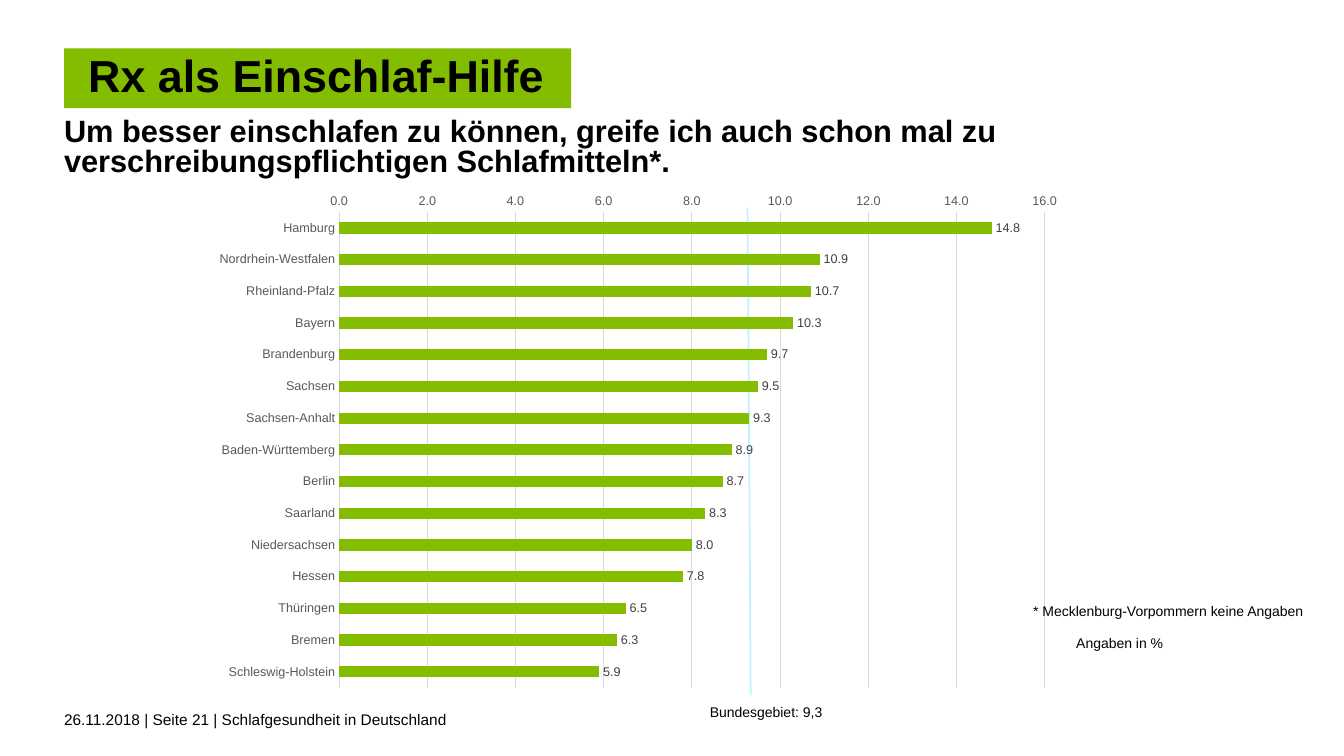
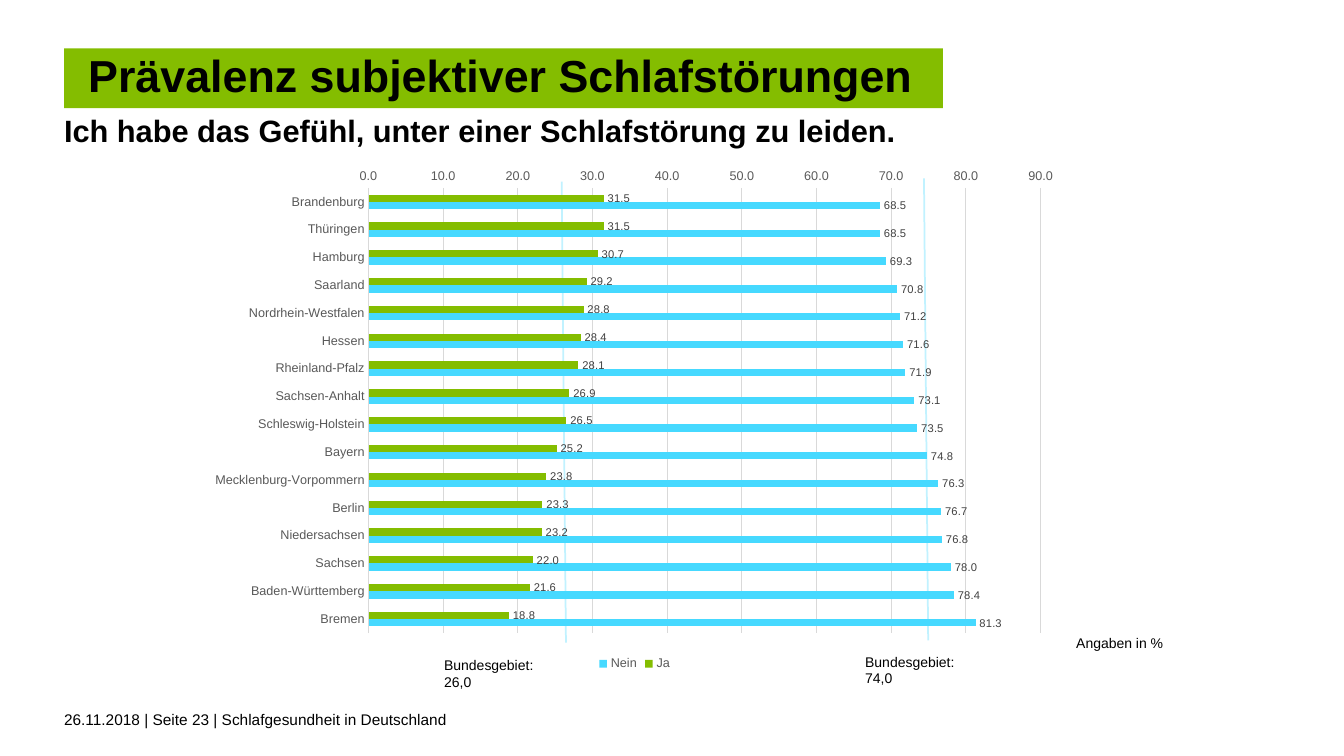
from lxml.etree import SubElement
from pptx import Presentation
from pptx.chart.data import CategoryChartData
from pptx.dml.color import RGBColor
from pptx.enum.chart import XL_CHART_TYPE, XL_LABEL_POSITION, XL_LEGEND_POSITION, XL_TICK_MARK
from pptx.enum.shapes import MSO_CONNECTOR
from pptx.enum.text import MSO_ANCHOR, MSO_AUTO_SIZE, PP_ALIGN
from pptx.oxml import parse_xml
from pptx.oxml.ns import nsdecls, qn
from pptx.util import Emu, Pt

PX = 9525
BLACK = RGBColor(0x00, 0x00, 0x00)
GREEN = RGBColor(0x84, 0xBD, 0x00)
BLUE = RGBColor(0x46, 0xD9, 0xFF)
PALE_BLUE = RGBColor(0xC1, 0xF2, 0xFF)
GRID = RGBColor(0xD9, 0xD9, 0xD9)
AXIS_TEXT = RGBColor(0x59, 0x59, 0x59)
LABEL_TEXT = RGBColor(0x40, 0x40, 0x40)
SERIES_COLORS = (GREEN, BLUE)
FONT = "Arial"
INSET = 23

SLIDES = [
    {
        "title": ("Rx als Einschlaf-Hilfe", 483),
        "subtitle": "Um besser einschlafen zu können, greife ich auch schon mal zu "
                    "verschreibungspflichtigen Schlafmitteln*.",
        "page": 21,
        "chart": (193, 174, 831, 492),
        "plot": (323, 202, 672, 453),
        "scale": (16, 2),
        "label_size": 9,
        "means": [(712, 198, 715, 662)],
        "notes": [
            ("* Mecklenburg-Vorpommern keine Angaben", (961, 569, 319, 26)),
            ("Bundesgebiet: 9,3", (653, 665, 159, 26)),
        ],
        "cats": ["Hamburg", "Nordrhein-Westfalen", "Rheinland-Pfalz", "Bayern", "Brandenburg",
                 "Sachsen", "Sachsen-Anhalt", "Baden-Württemberg", "Berlin", "Saarland",
                 "Niedersachsen", "Hessen", "Thüringen", "Bremen", "Schleswig-Holstein"],
        "series": {
            "Series 1": [14.8, 10.9, 10.7, 10.3, 9.7, 9.5, 9.3, 8.9, 8.7, 8.3, 8.0, 7.8,
                         6.5, 6.3, 5.9],
        },
    },
    {
        "title": ("Prävalenz subjektiver Schlafstörungen", 837),
        "subtitle": "Ich habe das Gefühl, unter einer Schlafstörung zu leiden.",
        "page": 23,
        "chart": (189, 151, 831, 492),
        "plot": (351, 179, 640, 424),
        "scale": (90, 10),
        "label_size": 8,
        "means": [(880, 170, 884, 610), (535, 173, 539, 612)],
        "notes": [
            ("Bundesgebiet: 26,0", (400, 620, 159, 26)),
            ("Bundesgebiet: 74,0", (801, 617, 159, 26)),
        ],
        "cats": ["Brandenburg", "Thüringen", "Hamburg", "Saarland", "Nordrhein-Westfalen",
                 "Hessen", "Rheinland-Pfalz", "Sachsen-Anhalt", "Schleswig-Holstein", "Bayern",
                 "Mecklenburg-Vorpommern", "Berlin", "Niedersachsen", "Sachsen",
                 "Baden-Württemberg", "Bremen"],
        "series": {
            "Ja": [31.5, 31.5, 30.7, 29.2, 28.8, 28.4, 28.1, 26.9, 26.5, 25.2, 23.8, 23.3,
                   23.2, 22.0, 21.6, 18.8],
            "Nein": [68.5, 68.5, 69.3, 70.8, 71.2, 71.6, 71.9, 73.1, 73.5, 74.8, 76.3, 76.7,
                     76.8, 78.0, 78.4, 81.3],
        },
    },
]


def emu(box):
    """Turn pixel lengths into EMU."""
    return [Emu(v * PX) for v in box]


def assign(obj, values):
    """Set attributes of an object from a dict."""
    for name, value in values.items():
        setattr(obj, name, value)


def style_font(font, size, color=BLACK, bold=False):
    """Give a font the deck's typeface with a size, colour and weight."""
    assign(font, {"name": FONT, "size": Pt(size), "bold": bold})
    font.color.rgb = color


def fill_text(sp, text, size, bold=False, left=INSET, right=INSET, spacing=None,
              anchor=MSO_ANCHOR.TOP, wrap=True):
    """Write one left-aligned paragraph into a shape."""
    tf = sp.text_frame
    assign(tf, {
        "auto_size": MSO_AUTO_SIZE.NONE, "word_wrap": wrap, "vertical_anchor": anchor,
        "margin_left": Emu(left * PX), "margin_right": Emu(right * PX),
        "margin_top": Emu(5 * PX), "margin_bottom": Emu(5 * PX),
    })
    p = tf.paragraphs[0]
    assign(p, {"alignment": PP_ALIGN.LEFT, "line_spacing": spacing})
    r = p.add_run()
    r.text = text
    style_font(r.font, size, bold=bold)


def add_text(s, box, text, size, **options):
    """Add a text box."""
    fill_text(s.shapes.add_textbox(*emu(box)), text, size, **options)


def add_heading(s, title, width, subtitle):
    """Place the green title band and the question below it."""
    sp = s.shapes.title
    assign(sp, dict(zip(("left", "top", "width", "height"), emu((61, 46, width, 57)))))
    sp.fill.solid()
    sp.fill.fore_color.rgb = GREEN
    fill_text(sp, title, 32, bold=True, spacing=0.9, anchor=MSO_ANCHOR.MIDDLE, wrap=False)
    add_text(s, (61, 108, 1157, 65), subtitle, 22, bold=True, left=0, right=10,
             spacing=Pt(21.6))


def add_footer(s, page):
    """Place the date, page and topic line."""
    add_text(s, (61, 671, 768, 38), f"26.11.2018 | Seite {page} | Schlafgesundheit in Deutschland",
             11, left=0, right=10)


def add_mean_line(s, ends):
    """Draw the pale line that marks the national mean."""
    line = s.shapes.add_connector(MSO_CONNECTOR.STRAIGHT, *emu(ends))
    line.line.color.rgb = PALE_BLUE
    line.line.width = Pt(1.25)
    SubElement(line._element.spPr, qn("a:effectLst"))


def set_plot_box(chart, frame, plot):
    """Fix the inner plot area inside the chart frame."""
    x, y, w, h = frame
    px, py, pw, ph = plot
    parts = {"x": (px - x) / w, "y": (py - y) / h, "w": pw / w, "h": ph / h}
    modes = "".join(f'<c:{k}Mode val="edge"/>' for k in "xy")
    sizes = "".join(f'<c:{k} val="{v:.4f}"/>' for k, v in parts.items())
    area = chart._chartSpace.chart.plotArea
    for old in area.findall(qn("c:layout")):
        area.remove(old)
    area.insert(0, parse_xml(
        f'<c:layout {nsdecls("c")}><c:manualLayout><c:layoutTarget val="inner"/>'
        f"{modes}{sizes}</c:manualLayout></c:layout>"))


def style_axes(chart, top, step):
    """Format the category and value axes."""
    cat, val = chart.category_axis, chart.value_axis
    for axis in (cat, val):
        assign(axis, {"major_tick_mark": XL_TICK_MARK.NONE, "minor_tick_mark": XL_TICK_MARK.NONE})
        style_font(axis.tick_labels.font, 9, AXIS_TEXT)
    cat.reverse_order = True
    assign(val, {"minimum_scale": 0, "maximum_scale": top, "major_unit": step,
                 "has_major_gridlines": True})
    assign(val.tick_labels, {"number_format": "0.0", "number_format_is_linked": False})
    for line in (cat.format.line, val.major_gridlines.format.line):
        line.color.rgb = GRID
        line.width = Pt(0.75)
    val.format.line.fill.background()


def add_bars(s, data):
    """Place the bar chart of the federal states."""
    cd = CategoryChartData(number_format="0.0")
    cd.categories = data["cats"]
    for name, values in data["series"].items():
        cd.add_series(name, values)
    chart = s.shapes.add_chart(XL_CHART_TYPE.BAR_CLUSTERED, *emu(data["chart"]), cd).chart
    style_font(chart.font, 10)
    assign(chart, {"has_title": False, "has_legend": len(data["series"]) > 1})
    if chart.has_legend:
        assign(chart.legend, {"position": XL_LEGEND_POSITION.BOTTOM, "include_in_layout": False})
        style_font(chart.legend.font, 9, AXIS_TEXT)
    style_axes(chart, *data["scale"])
    set_plot_box(chart, data["chart"], data["plot"])
    plot = chart.plots[0]
    assign(plot, {"gap_width": 182, "vary_by_categories": False})
    for series, color in zip(plot.series, SERIES_COLORS):
        series.format.fill.solid()
        series.format.fill.fore_color.rgb = color
        labels = series.data_labels
        assign(labels, {"show_value": True, "number_format": "0.0",
                        "number_format_is_linked": False,
                        "position": XL_LABEL_POSITION.OUTSIDE_END})
        style_font(labels.font, data["label_size"], LABEL_TEXT)


def add_survey_slide(prs, data):
    """Build one survey result slide."""
    s = prs.slides.add_slide(prs.slide_layouts[5])
    add_footer(s, data["page"])
    for ends in data["means"]:
        add_mean_line(s, ends)
    add_heading(s, *data["title"], data["subtitle"])
    add_bars(s, data)
    for text, box in [("Angaben in %", (1002, 599, 176, 26))] + data["notes"]:
        add_text(s, box, text, 10)


def main():
    """Build and save the presentation."""
    prs = Presentation()
    prs.slide_width, prs.slide_height = emu((1280, 720))
    for data in SLIDES:
        add_survey_slide(prs, data)
    prs.save("out.pptx")


if __name__ == "__main__":
    main()
